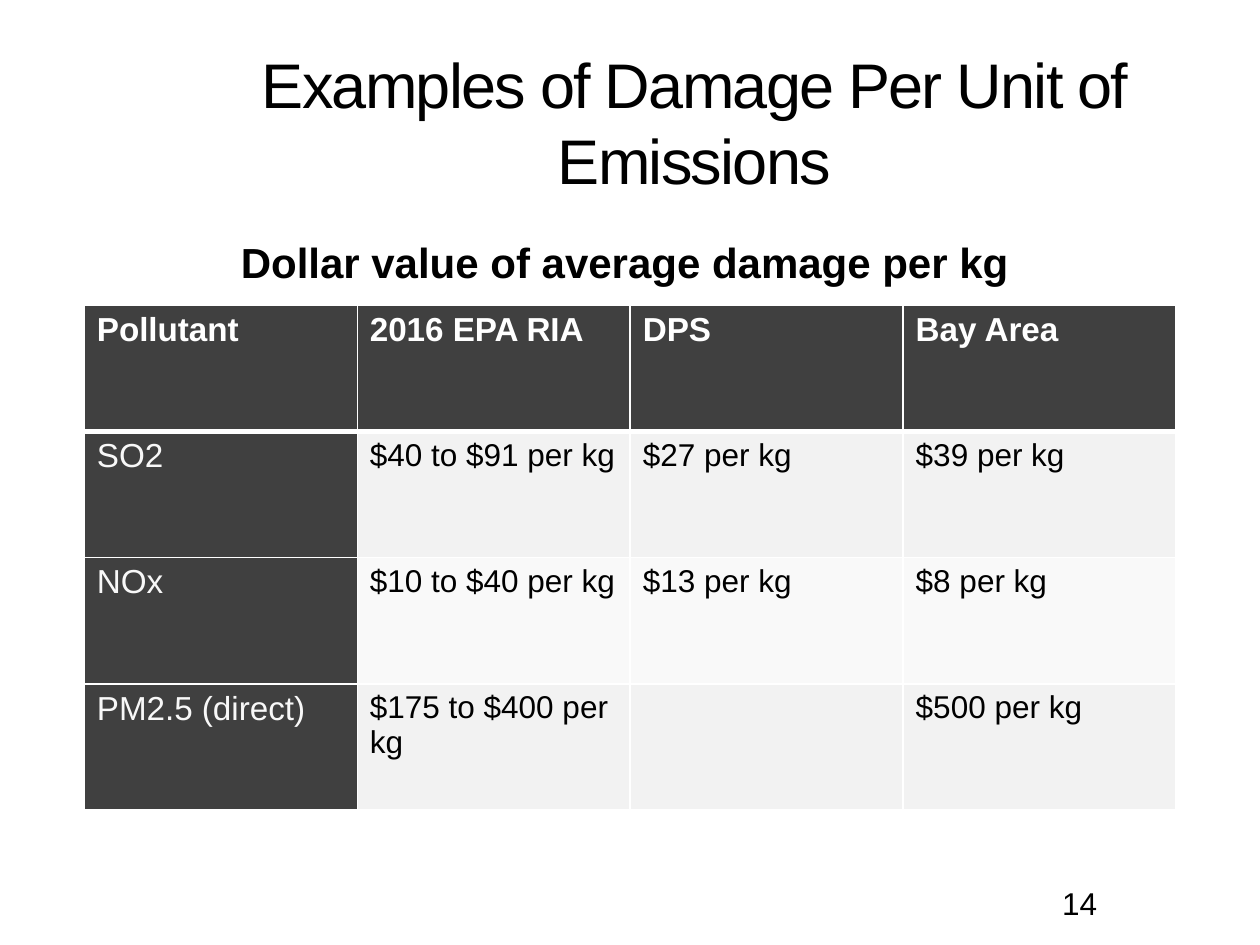
from dataclasses import dataclass
from typing import Optional

import pptx
import pptx.dml.color
import pptx.enum.text
import pptx.oxml.ns
import pptx.util
from lxml import etree

Cm, Pt = pptx.util.Cm, pptx.util.Pt
ALIGN = pptx.enum.text.PP_ALIGN
ANCHOR = pptx.enum.text.MSO_ANCHOR

HUES = {"ink": "000000", "white": "FFFFFF", "pale": "F8F8F8",
        "dark": "404040", "odd": "F2F2F2", "even": "F9F9F9"}

ROWS = [
    ("Pollutant", "2016 EPA RIA", "DPS", "Bay Area"),
    ("SO2", "$40 to $91 per kg", "$27 per kg", "$39 per kg"),
    ("NOx", "$10 to $40 per kg", "$13 per kg", "$8 per kg"),
    ("PM2.5 (direct)", "$175 to $400 per kg", "", "$500 per kg"),
]


@dataclass
class Style:
    size: float
    hue: str = "ink"
    bold: bool = False


@dataclass
class Label:
    text: str
    box: tuple[float, float, float, float]
    style: Style
    align: Optional[ALIGN] = None
    wrap: bool = True


HEAD = Style(19, "white", True)
SIDE = Style(19, "pale")
BODY = Style(18)

LABELS = [
    Label("Dollar value of average damage per kg", (4.52, 4.65, 16.15, 1.27),
          Style(24, bold=True), ALIGN.CENTER, False),
    Label("14", (21.16, 17.7, 2.97, 0.91), BODY),
]


def color(hue: str) -> pptx.dml.color.RGBColor:
    return pptx.dml.color.RGBColor.from_string(HUES[hue])


def write(frame, text: str, style: Style, align: Optional[ALIGN] = None):
    """Add one styled run to the first paragraph and return it."""
    para = frame.paragraphs[0]
    para.alignment = align
    run = para.add_run()
    run.text = text
    run.font.name = "Arial"
    run.font.size = Pt(style.size)
    run.font.bold = style.bold
    run.font.color.rgb = color(style.hue)
    return run


def place(shape, box: tuple[float, float, float, float]) -> None:
    shape.left, shape.top, shape.width, shape.height = map(Cm, box)


def draw_label(slide, label: Label) -> None:
    shape = slide.shapes.add_textbox(*map(Cm, label.box))
    shape.text_frame.word_wrap = label.wrap
    write(shape.text_frame, label.text, label.style, label.align)


def edge(cell, foot: float) -> None:
    """Give a cell white borders, the bottom one of width foot."""
    props = cell._tc.get_or_add_tcPr()
    qn = pptx.oxml.ns.qn
    for spot, (side, width) in enumerate(
            (("lnL", 1), ("lnR", 1), ("lnT", 1), ("lnB", foot))):
        line = etree.Element(qn(f"a:{side}"), w=str(Pt(width)))
        fill = etree.SubElement(line, qn("a:solidFill"))
        etree.SubElement(fill, qn("a:srgbClr"), val=HUES["white"])
        props.insert(spot, line)


def draw_table(slide) -> None:
    count = len(ROWS)
    table = slide.shapes.add_table(
        count, len(ROWS[0]), Cm(1.7), Cm(6.15), Cm(22.01), Cm(10.18)).table
    for r, row in enumerate(ROWS):
        for c, text in enumerate(row):
            cell = table.cell(r, c)
            style = HEAD if r == 0 else SIDE if c == 0 else BODY
            band = "odd" if r % 2 else "even"
            cell.fill.solid()
            cell.fill.fore_color.rgb = color(band if style is BODY else "dark")
            # The header's lower rule is heavy, on both sides of the edge
            edge(cell, 3 if r == 0 else 1)
            if r == 1:
                top = cell._tc.tcPr.find(pptx.oxml.ns.qn("a:lnT"))
                top.set("w", str(Pt(3)))
            if text:
                write(cell.text_frame, text, style)


def main() -> None:
    deck = pptx.Presentation()
    deck.slide_width, deck.slide_height = Cm(25.4), Cm(19.05)
    slide = deck.slides.add_slide(deck.slide_layouts[5])

    # Title
    title = slide.shapes.title
    place(title, (3.84, 1.07, 20.32, 2.74))
    frame = title.text_frame
    frame.word_wrap = True
    frame.auto_size = pptx.enum.text.MSO_AUTO_SIZE.NONE
    frame.vertical_anchor = ANCHOR.MIDDLE
    run = write(frame, "Examples of Damage Per Unit of Emissions",
                Style(36), ALIGN.CENTER)
    run.font._element.set("spc", "-100")

    # Subtitle, page number and table
    for label in LABELS:
        draw_label(slide, label)
    draw_table(slide)

    deck.save("out.pptx")


if __name__ == "__main__":
    main()
